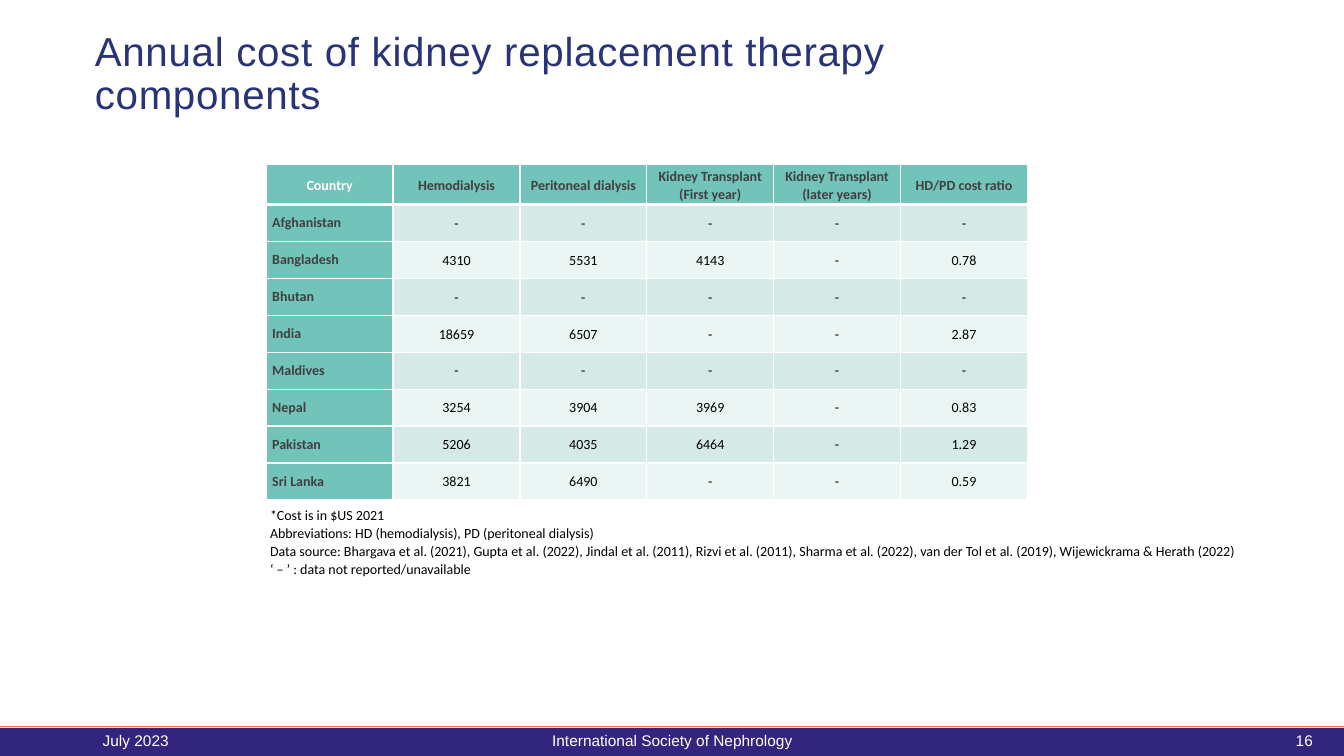
import pptx
import pptx.util
import pptx.dml.color
import pptx.enum.text
import pptx.enum.shapes
import lxml.etree

Inches = pptx.util.Inches
Pt = pptx.util.Pt
RGB = pptx.dml.color.RGBColor.from_string
Align = pptx.enum.text.PP_ALIGN
Anchor = pptx.enum.text.MSO_ANCHOR
namespace = "{http://schemas.openxmlformats.org/drawingml/2006/main}"

theme = {
    "navy": "283378", "bar": "32257E", "rule": "FE7055", "teal": "72C3B9",
    "bands": ("D5E9E6", "EBF5F3"), "label": "404040", "black": "000000", "white": "FFFFFF",
    "title_size": 28.8, "body_size": 10, "footer_size": 11,
}


def write_text(frame, lines, align, spacing, **font_values):
    frame.word_wrap = True
    frame.text = "\n".join(lines)
    color = font_values.pop("color")
    for para in frame.paragraphs:
        para.alignment = align
        para.line_spacing = spacing
        for span in para.runs:
            span.font.color.rgb = RGB(color)
            for name, value in font_values.items():
                setattr(span.font, name, value)


def add_border(cell, side, width):
    properties = cell._tc.get_or_add_tcPr()
    line = lxml.etree.SubElement(properties, namespace + side, w=str(Pt(width)))
    fill = lxml.etree.SubElement(line, namespace + "solidFill")
    lxml.etree.SubElement(fill, namespace + "srgbClr", val=theme["white"])


deck = pptx.Presentation()
deck.slide_width = Inches(13.33)
deck.slide_height = Inches(7.5)
page = deck.slides.add_slide(deck.slide_layouts[5])

bar = page.shapes.add_shape(pptx.enum.shapes.MSO_SHAPE.RECTANGLE,
                            Inches(0), Inches(7.22), Inches(13.33), Inches(0.28))
bar.shadow.inherit = False
bar.fill.solid()
bar.fill.fore_color.rgb = RGB(theme["bar"])
bar.line.fill.background()

rule = page.shapes.add_connector(pptx.enum.shapes.MSO_CONNECTOR.STRAIGHT,
                                 Inches(0), Inches(7.21), Inches(13.33), Inches(7.21))
rule.line.color.rgb = RGB(theme["rule"])
rule.line.width = Pt(0.75)
lxml.etree.SubElement(rule._element.spPr, namespace + "effectLst")

title = page.shapes.title
title_place = {"left": 0.84, "top": 0.39, "width": 9.26, "height": 0.71}
for name, value in title_place.items():
    setattr(title, name, Inches(value))
title.text_frame.auto_size = pptx.enum.text.MSO_AUTO_SIZE.NONE
title.text_frame.vertical_anchor = Anchor.MIDDLE
write_text(title.text_frame, ["Annual cost of kidney replacement therapy components"],
           Align.LEFT, 0.9, color=theme["navy"], size=Pt(theme["title_size"]), name="Arial")
title.text_frame.paragraphs[0].runs[0].font._element.set("spc", "50")

costs = [
    ["Country", "Hemodialysis", "Peritoneal dialysis", "Kidney Transplant\n(First year)",
     "Kidney Transplant\n(later years)", "HD/PD cost ratio"],
    ["Afghanistan", "-", "-", "-", "-", "-"],
    ["Bangladesh", "4310", "5531", "4143", "-", "0.78"],
    ["Bhutan", "-", "-", "-", "-", "-"],
    ["India", "18659", "6507", "-", "-", "2.87"],
    ["Maldives", "-", "-", "-", "-", "-"],
    ["Nepal", "3254", "3904", "3969", "-", "0.83"],
    ["Pakistan", "5206", "4035", "6464", "-", "1.29"],
    ["Sri Lanka", "3821", "6490", "-", "-", "0.59"],
]
table = page.shapes.add_table(len(costs), len(costs[0]), Inches(2.64), Inches(1.63),
                              Inches(7.55), Inches(3.33)).table
for column in table.columns:
    column.width = Inches(7.55 / len(costs[0]))
for row_index, row in enumerate(costs):
    is_header = row_index == 0
    table.rows[row_index].height = Inches(0.4 if is_header else 2.93 / 8)
    for column_index, text in enumerate(row):
        cell = table.cell(row_index, column_index)
        is_country = column_index == 0
        is_label = is_header or is_country
        side_margin = 0.03 if is_header else 0.06 if is_country else 0.01
        cell_format = {
            "vertical_anchor": Anchor.MIDDLE,
            "margin_left": Inches(side_margin), "margin_right": Inches(side_margin),
            "margin_top": Inches(0 if is_country and not is_header else 0.01),
            "margin_bottom": Inches(0),
        }
        for name, value in cell_format.items():
            setattr(cell, name, value)
        for side in ("lnL", "lnR", "lnT", "lnB"):
            heavy = (is_header and side == "lnB") or (row_index == 1 and side == "lnT")
            add_border(cell, side, 3 if heavy else 1)
        cell.fill.solid()
        band = theme["bands"][(row_index + 1) % 2]
        cell.fill.fore_color.rgb = RGB(theme["teal"] if is_label else band)
        color = theme["label"] if is_label else theme["black"]
        if is_header and is_country:
            color = theme["white"]
        write_text(cell.text_frame, text.split("\n"),
                   Align.LEFT if is_country and not is_header else Align.CENTER,
                   1.06 if is_header else 1.0, color=color,
                   size=Pt(theme["body_size"]), name="Calibri", bold=is_label)

notes = page.shapes.add_textbox(Inches(2.58), Inches(4.96), Inches(10.04), Inches(0.81))
write_text(notes.text_frame, [
    "*Cost is in $US 2021",
    "Abbreviations: HD (hemodialysis), PD (peritoneal dialysis)",
    "Data source: Bhargava et al. (2021), Gupta et al. (2022), Jindal et al. (2011), "
    "Rizvi et al. (2011), Sharma et al. (2022), van der Tol et al. (2019), "
    "Wijewickrama & Herath (2022)",
    "‘ – ’ : data not reported/unavailable",
], Align.LEFT, 1.07, color=theme["black"], size=Pt(theme["body_size"]), name="Calibri")

footers = [
    ("July 2023", 0.92, 3, Align.LEFT),
    ("International Society of Nephrology", 4.42, 4.5, Align.CENTER),
    ("16", 9.42, 3.7, Align.RIGHT),
]
for text, left, width, align in footers:
    footer = page.shapes.add_textbox(Inches(left), Inches(7.15), Inches(width), Inches(0.4))
    footer.text_frame.vertical_anchor = Anchor.MIDDLE
    write_text(footer.text_frame, [text], align, 1.0, color=theme["white"],
               size=Pt(theme["footer_size"]), name="Arial")

deck.save("out.pptx")
